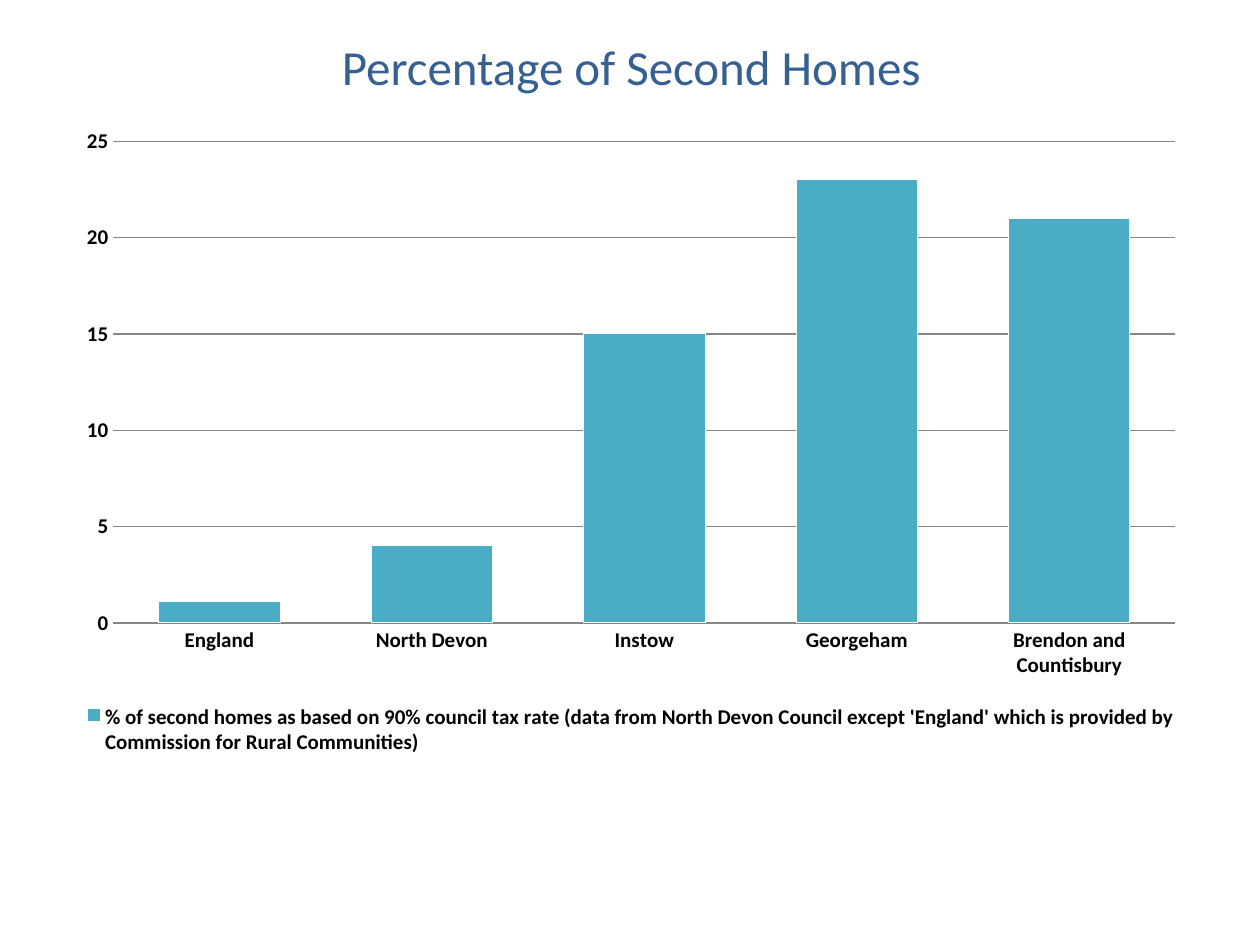
from dataclasses import dataclass

from pptx import Presentation
from pptx.chart.data import CategoryChartData as ChartData
from pptx.dml.color import RGBColor as RGB
from pptx.enum.chart import XL_CHART_TYPE as Kind
from pptx.enum.chart import XL_LEGEND_POSITION as Spot
from pptx.enum.chart import XL_TICK_MARK as Tick
from pptx.enum.text import MSO_ANCHOR as Anchor
from pptx.enum.text import PP_ALIGN as Align
from pptx.util import Inches, Pt


@dataclass(frozen=True)
class Theme:
    face: str = "Calibri"
    title: RGB = RGB(0x37, 0x60, 0x92)
    text: RGB = RGB(0, 0, 0)
    bar: RGB = RGB(0x4B, 0xAC, 0xC6)
    edge: RGB = RGB(0xFF, 0xFF, 0xFF)
    grid: RGB = RGB(0x86, 0x86, 0x86)
    big: Pt = Pt(28)
    small: Pt = Pt(12)


THEME = Theme()
NAME = ("% of second homes as based on 90% council tax rate "
        "(data from North Devon Council except 'England' which is "
        "provided by Commission for Rural Communities)")
HOMES = {
    "England": 1.1,
    "North Devon": 4,
    "Instow": 15,
    "Georgeham": 23,
    "Brendon and Countisbury": 21,
}


def style(font, size, color, bold=False):
    font.name = THEME.face
    font.size = size
    font.bold = bold
    font.color.rgb = color


def add_title(slide, box, text):
    title = slide.shapes.title
    title.left, title.top, title.width, title.height = box
    frame = title.text_frame
    frame.vertical_anchor = Anchor.MIDDLE
    para = frame.paragraphs[0]
    para.alignment = Align.CENTER
    run = para.add_run()
    run.text = text
    style(run.font, THEME.big, THEME.title)


def set_axes(chart):
    cats, vals = chart.category_axis, chart.value_axis
    for axis in (cats, vals):
        axis.major_tick_mark = axis.minor_tick_mark = Tick.NONE
        style(axis.tick_labels.font, THEME.small, THEME.text, True)
    vals.minimum_scale, vals.maximum_scale, vals.major_unit = 0, 25, 5
    vals.format.line.fill.background()
    vals.has_major_gridlines = True
    for line in (cats.format.line, vals.major_gridlines.format.line):
        line.color.rgb = THEME.grid
        line.width = Pt(0.75)


def add_bars(slide, box):
    data = ChartData()
    data.categories = list(HOMES)
    data.add_series(NAME, list(HOMES.values()))
    chart = slide.shapes.add_chart(Kind.COLUMN_CLUSTERED, *box, data).chart
    chart.has_title = False
    style(chart.font, THEME.small, THEME.text)
    set_axes(chart)

    plot = chart.plots[0]
    plot.gap_width, plot.overlap = 75, -25
    plot.vary_by_categories = False
    bars = plot.series[0]
    bars.invert_if_negative = False
    bars.format.fill.solid()
    bars.format.fill.fore_color.rgb = THEME.bar
    bars.format.line.color.rgb = THEME.edge

    chart.has_legend = True
    legend = chart.legend
    legend.position = Spot.BOTTOM
    legend.include_in_layout = False
    style(legend.font, THEME.small, THEME.text, True)


def main():
    deck = Presentation()
    deck.slide_width, deck.slide_height = Inches(10), Inches(7.5)
    slide = deck.slides.add_slide(deck.slide_layouts[5])
    left, width = Inches(0.51), Inches(9)
    add_title(slide, (left, Inches(0.21), width, Inches(0.63)),
              "Percentage of Second Homes")
    add_bars(slide, (left, Inches(0.92), width, Inches(5.11)))
    deck.save("out.pptx")


if __name__ == "__main__":
    main()
